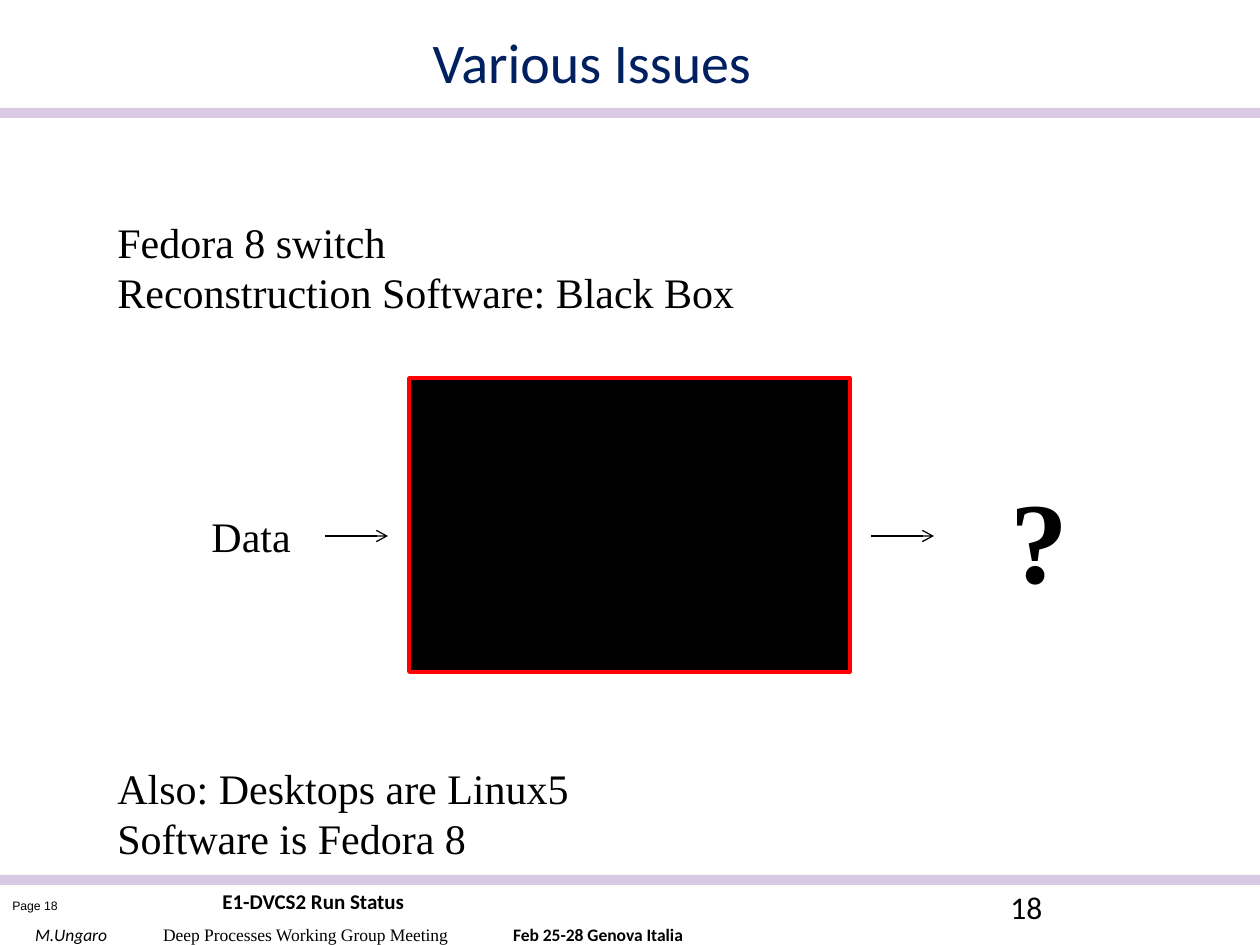
from lxml import etree
from pptx import Presentation, util as u
from pptx.dml.color import RGBColor
from pptx.enum import shapes, text
from pptx.oxml.ns import qn

SCALE = 914400 / 126  # EMU per px
BLACK, WHITE, RED, NAVY, LILAC = "000000", "FFFFFF", "FF0000", "002060", "DAC9E4"
SERIF, SANS = "Times New Roman", "Calibri"
BODY = {"name": SERIF, "size": u.Pt(24)}


def px(length):
    return u.Emu(round(length * SCALE))


def color(value):
    return RGBColor.from_string(value)


def format_font(font, formats, fill=BLACK):
    for name, value in formats.items():
        setattr(font, name, value)
    font.color.rgb = color(fill)


def place(shape, box):
    for name, value in zip(("left", "top", "width", "height"), box):
        setattr(shape, name, px(value))


def add_text(page, box, lines, formats, wrap=False):
    shape = page.shapes.add_textbox(*map(px, box))
    frame = shape.text_frame
    frame.word_wrap = wrap
    frame.text = "\n".join(lines)
    for para in frame.paragraphs:
        format_font(para.font, formats)


def add_rectangle(page, box, fill, line=None):
    shape = page.shapes.add_shape(shapes.MSO_SHAPE.RECTANGLE, *map(px, box))
    shape.shadow.inherit = False
    shape.fill.solid()
    shape.fill.fore_color.rgb = color(fill)
    if line:
        shape.line.color.rgb = color(line)
        shape.line.width = u.Pt(2)
    else:
        shape.line.fill.background()
    return shape


def add_arrow(page, left, top, length):
    arrow = page.shapes.add_connector(
        shapes.MSO_CONNECTOR.STRAIGHT, px(left), px(top), px(left + length), px(top))
    arrow.line.color.rgb = color(BLACK)
    arrow.line.width = u.Pt(0.75)
    etree.SubElement(arrow.line._get_or_add_ln(), qn("a:tailEnd"), type="arrow")
    etree.SubElement(arrow._element.spPr, qn("a:effectLst"))


def add_title(page, box, title):
    shape = page.shapes.title
    place(shape, box)
    frame = shape.text_frame
    frame.text = title
    frame.word_wrap = False
    frame.auto_size = text.MSO_AUTO_SIZE.NONE
    frame.vertical_anchor = text.MSO_ANCHOR.TOP
    para = frame.paragraphs[0]
    para.alignment = text.PP_ALIGN.LEFT
    format_font(para.font, {"name": SANS, "size": u.Pt(32)}, NAVY)


def add_meeting_line(page, box):
    """Author, meeting and date on one line, set apart by tab stops."""
    frame = add_rectangle(page, box, WHITE).text_frame
    frame.margin_left = px(4)
    frame.margin_top = frame.margin_right = frame.margin_bottom = 0
    frame.vertical_anchor = text.MSO_ANCHOR.TOP
    para = frame.paragraphs[0]
    para.alignment = text.PP_ALIGN.LEFT
    tabs = etree.SubElement(para._p.get_or_add_pPr(), qn("a:tabLst"))
    for stop in (128, 478):
        etree.SubElement(tabs, qn("a:tab"), pos=str(px(stop)), algn="l")
    parts = (
        ("M.Ungaro\t", {"name": SANS, "italic": True}),
        ("Deep Processes Working Group Meeting\t", {"name": SERIF}),
        ("Feb 25-28 Genova Italia", {"name": SANS, "bold": True}),
    )
    for words, formats in parts:
        span = para.add_run()
        span.text = words
        format_font(span.font, {"size": u.Pt(10), **formats})


def add_footer(page, box):
    left, top, width, height = box
    add_text(page, (left, top + 17, 73, 28), ["Page 18"], {"name": "Arial", "size": u.Pt(7)})
    add_meeting_line(page, (left + 31, top + 49, 735, 21))
    add_rectangle(page, (left, top, width, 10), LILAC)
    add_text(page, (left + 210, top + 7, 388, 38), ["E1-DVCS2 Run Status"],
             {"name": SANS, "size": u.Pt(12), "bold": True}, wrap=True)
    add_text(page, (left + 998, top + 7, 294, 29), ["18"],
             {"name": SANS, "size": u.Pt(18)}, wrap=True)


def add_black_box_diagram(page, box):
    left, top, width, height = box
    box_left, box_width, gap, arrow = left + 210, 441, 21, 63
    add_text(page, (left, top + 126, 106, 63), ["Data"], BODY)
    add_rectangle(page, (box_left, top, box_width, height), BLACK, RED)
    for start in (box_left - gap - arrow, box_left + box_width + gap):
        add_arrow(page, start, top + 158, arrow)
    add_text(page, (left + width - 83, top + 84, 83, 152), ["?"],
             {"name": SERIF, "size": u.Pt(66), "bold": True})


def main():
    deck = Presentation()
    deck.slide_width, deck.slide_height = px(1260), px(945)
    page = deck.slides.add_slide(deck.slide_layouts.get_by_name("Title Only"))
    add_footer(page, (0, 875, 1260, 70))
    add_rectangle(page, (0, 108, 1260, 10), LILAC)
    add_title(page, (420, 21, 348, 81), "Various Issues")
    add_text(page, (105, 210, 648, 115),
             ["Fedora 8 switch", "Reconstruction Software: Black Box"], BODY)
    add_black_box_diagram(page, (199, 378, 882, 294))
    add_text(page, (105, 756, 490, 115),
             ["Also: Desktops are Linux5", "Software is Fedora 8"], BODY)
    deck.save("out.pptx")


if __name__ == "__main__":
    main()
